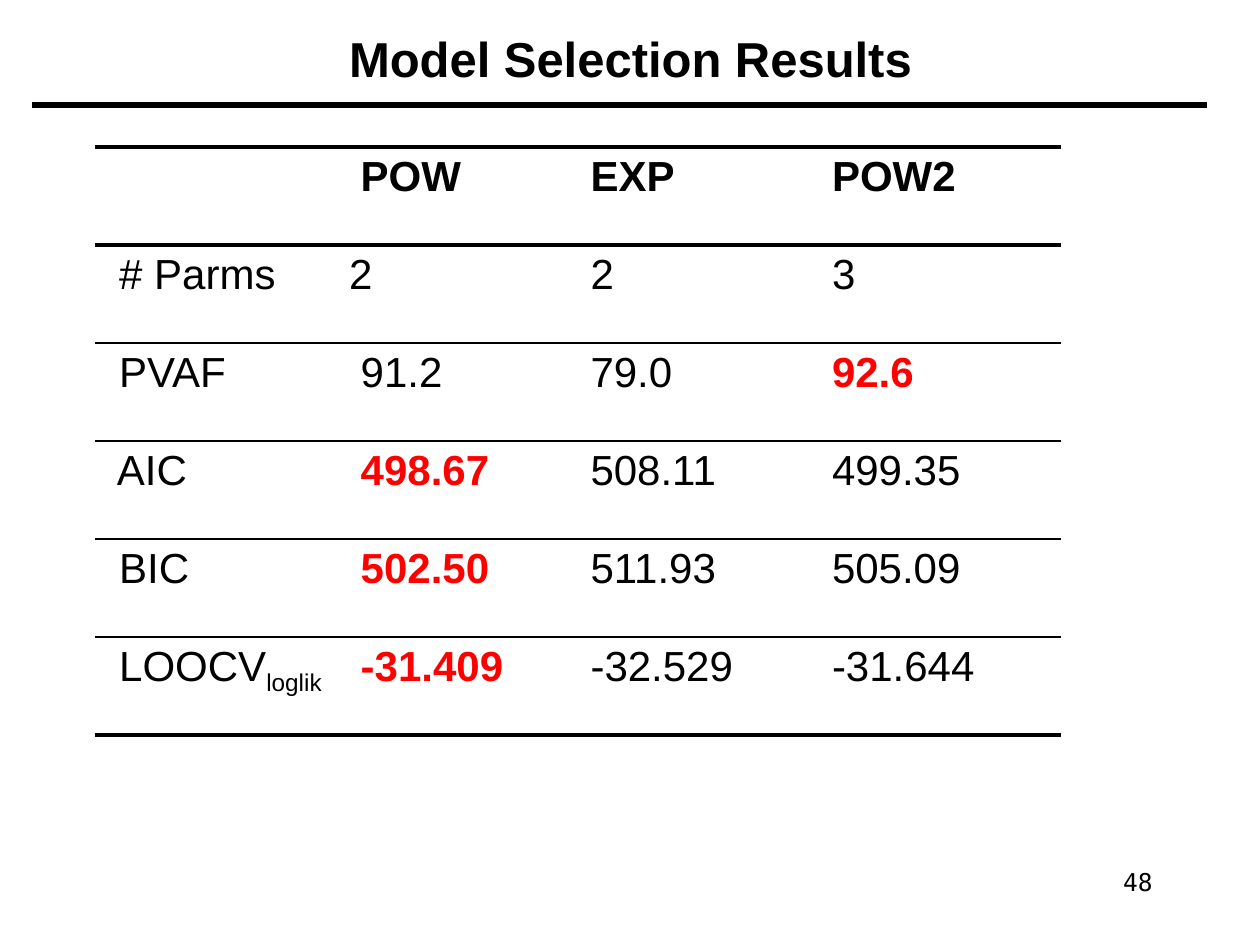
from lxml import etree
from pptx import Presentation
from pptx.dml.color import RGBColor
from pptx.enum.shapes import MSO_CONNECTOR
from pptx.enum.text import MSO_ANCHOR, PP_ALIGN
from pptx.oxml import parse_xml
from pptx.oxml.ns import nsdecls, qn
from pptx.util import Emu, Pt

STRAIGHT = MSO_CONNECTOR.STRAIGHT
TOP, MIDDLE = MSO_ANCHOR.TOP, MSO_ANCHOR.MIDDLE
CENTER, RIGHT = PP_ALIGN.CENTER, PP_ALIGN.RIGHT

TITLE = "Model Selection Results"
PAGE_NUMBER = "48"
BLACK, RED = "000000", "FF0000"
PLAIN, BOLD, BEST, SUB = "plain", "bold", "best", "sub"
RESULTS = [
    [[], [(" POW", BOLD)], [("EXP", BOLD)], [("POW2", BOLD)]],
    [[(" # Parms", PLAIN)], [("2", PLAIN)], [("2", PLAIN)], [("3", PLAIN)]],
    [[(" PVAF", PLAIN)], [(" 91.2", PLAIN)], [("79.0", PLAIN)], [("92.6", BEST)]],
    [[(" AIC", PLAIN)], [(" ", PLAIN), ("498.67", BEST)], [("508.11", PLAIN)], [("499.35", PLAIN)]],
    [[(" BIC", PLAIN)], [(" ", PLAIN), ("502.50", BEST)], [("511.93", PLAIN)], [("505.09", PLAIN)]],
    [[(" LOOCV", PLAIN), ("loglik", SUB)], [(" ", PLAIN), ("-31.409", BEST)],
     [("-32.529", PLAIN)], [("-31.644", PLAIN)]],
]
RULE_WIDTHS = [2.25, 2.25, 1, 1, 1, 1, 2.25]
TABLE_LEFT, TABLE_TOP = 95, 147
TABLE_WIDTH, ROW_HEIGHT = 966, 98


def px(length):
    return Emu(round(length * 914400 / 126))


def color(value):
    return RGBColor.from_string(value)


def add_span(para, text, size, font="Arial", bold=False, fill=BLACK):
    span = para.add_run()
    span.text = text
    span.font.name = font
    span.font.size = Pt(size)
    span.font.bold = bold
    span.font.color.rgb = color(fill)
    return span


def add_text(page, text, frame, align, anchor, size, **style):
    box = page.shapes.add_textbox(*map(px, frame)).text_frame
    box.word_wrap = True
    box.vertical_anchor = anchor
    para = box.paragraphs[0]
    para.alignment = align
    add_span(para, text, size, **style)


def set_borders(cell, top, bottom):
    cell.fill.background()
    properties = cell._tc.get_or_add_tcPr()
    sides = [("lnL", 0), ("lnR", 0), ("lnT", top), ("lnB", bottom)]
    for position, (side, width) in enumerate(sides):
        paint = f'<a:solidFill><a:srgbClr val="{BLACK}"/></a:solidFill>' if width else "<a:noFill/>"
        line = f'<a:{side} {nsdecls("a")} w="{int(Pt(width))}">{paint}</a:{side}>'
        properties.insert(position, parse_xml(line))


def add_results(page):
    row_count, column_count = len(RESULTS), len(RESULTS[0])
    frame = (TABLE_LEFT, TABLE_TOP, TABLE_WIDTH, ROW_HEIGHT * row_count)
    table = page.shapes.add_table(row_count, column_count, *map(px, frame)).table
    table.first_row = False
    table.horz_banding = False
    for column in table.columns:
        column.width = px(TABLE_WIDTH / column_count)
    for row_index, row in enumerate(RESULTS):
        table.rows[row_index].height = px(ROW_HEIGHT)
        for column_index, spans in enumerate(row):
            cell = table.cell(row_index, column_index)
            set_borders(cell, *RULE_WIDTHS[row_index:row_index + 2])
            para = cell.text_frame.paragraphs[0]
            for text, style in spans:
                span = add_span(para, text, 24, bold=style in (BOLD, BEST),
                                fill=RED if style == BEST else BLACK)
                if style == SUB:
                    span._r.get_or_add_rPr().set("baseline", "-25000")


def add_title_rule(page):
    rule = page.shapes.add_connector(STRAIGHT, px(32), px(105), px(1207), px(105))
    rule.line.color.rgb = color(BLACK)
    rule.line.width = Pt(3)
    etree.SubElement(rule._element.spPr, qn("a:effectLst"))


def main():
    deck = Presentation()
    deck.slide_width, deck.slide_height = px(1260), px(945)
    page = deck.slides.add_slide(deck.slide_layouts[6])
    add_text(page, TITLE, (32, 21, 1197, 73), CENTER, MIDDLE, 28, bold=True)
    add_results(page)
    add_title_rule(page)
    add_text(page, PAGE_NUMBER, (903, 861, 262, 63), RIGHT, TOP, 14, font="DejaVu Sans Mono")
    deck.save("out.pptx")


if __name__ == "__main__":
    main()
